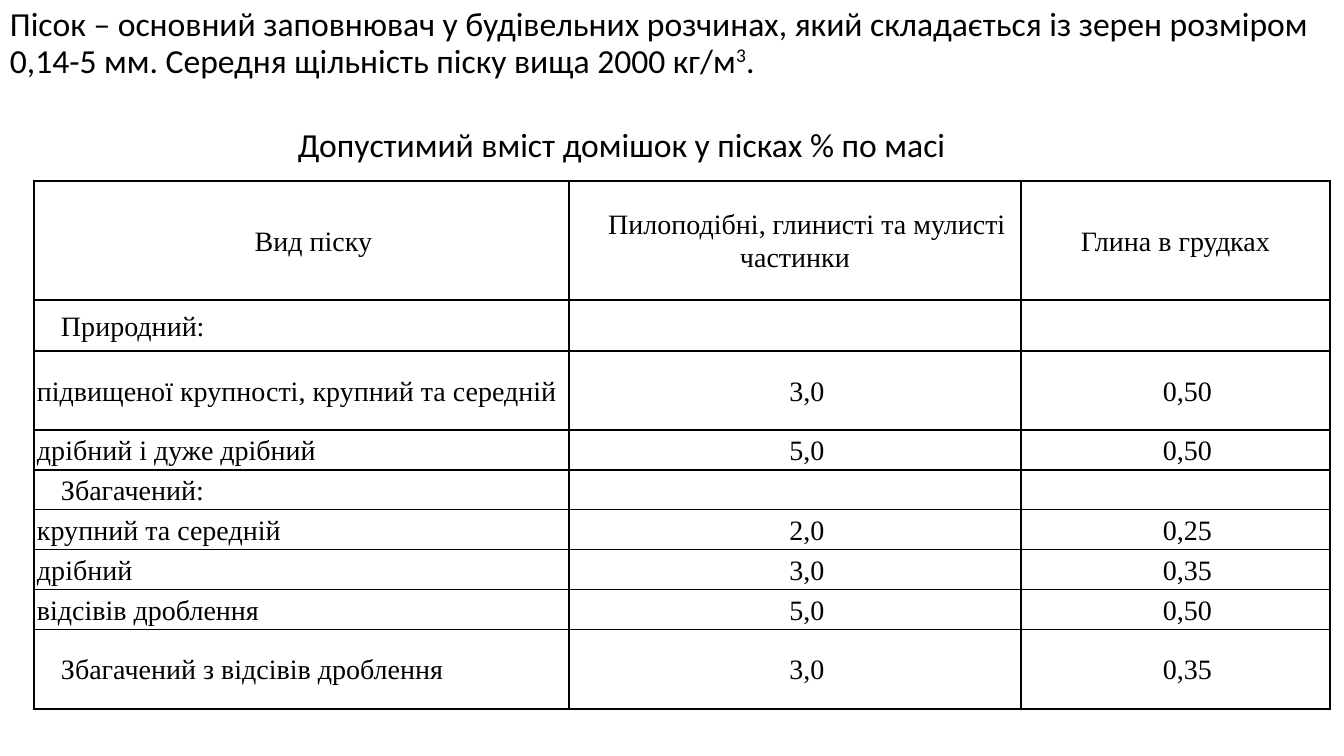
from lxml.etree import SubElement
from pptx import Presentation
from pptx.dml.color import RGBColor
from pptx.enum.text import MSO_ANCHOR, PP_ALIGN
from pptx.oxml.ns import qn
from pptx.util import Emu, Pt

PX = 914400 / 100.8
INDENT = 24
BLACK = "000000"
BODY = {"name": "Calibri", "size": Pt(24)}
TABLE = {"name": "Times New Roman", "size": Pt(20)}
COLUMNS = [535, 452, 309]
ROWS = [119, 51, 79, 40, 40, 40, 40, 40, 79]
SANDS = [
    ("Вид піску", "Пилоподібні, глинисті та мулисті частинки", "Глина в грудках"),
    ("Природний:", "", ""),
    ("підвищеної крупності, крупний та середній", "3,0", "0,50"),
    ("дрібний і дуже дрібний", "5,0", "0,50"),
    ("Збагачений:", "", ""),
    ("крупний та середній", "2,0", "0,25"),
    ("дрібний", "3,0", "0,35"),
    ("відсівів дроблення", "5,0", "0,50"),
    ("Збагачений з відсівів дроблення", "3,0", "0,35"),
]
INDENTED_ROWS = {0, 1, 4, 8}


def px(length):
    return Emu(round(length * PX))


def color(value):
    return RGBColor.from_string(value)


def apply(target, values):
    for name, value in values.items():
        setattr(target, name, value)


def add_span(para, text, font):
    span = para.add_run()
    span.text = text
    apply(span.font, font)
    span.font.color.rgb = color(BLACK)
    return span


def indent(para):
    para._p.get_or_add_pPr().set("indent", str(px(INDENT)))


def add_box(page, left, top, width, height):
    box = page.shapes.add_textbox(px(left), px(top), px(width), px(height))
    apply(box.text_frame, {"word_wrap": True, "vertical_anchor": MSO_ANCHOR.MIDDLE})
    return box.text_frame.paragraphs[0]


def add_definition(page, left, top, width, height):
    para = add_box(page, left, top, width, height)
    para.line_spacing = 0.9
    add_span(para, "Пісок – основний заповнювач у будівельних розчинах, який складається "
                   "із зерен розміром 0,14-5 мм. Середня щільність піску вища 2000 кг/м", BODY)
    power = add_span(para, "3", BODY)
    power.font._element.set("baseline", "30000")
    add_span(para, ".", BODY)


def add_caption(page, left, top, width, height):
    para = add_box(page, left, top, width, height)
    indent(para)
    add_span(para, "Допустимий вміст домішок у пісках % по масі", BODY)


def draw_borders(cell, row, column):
    thick = {
        "a:lnL": column == 0,
        "a:lnR": column == len(COLUMNS) - 1,
        "a:lnT": row in (0, 1),
        "a:lnB": row in (0, len(ROWS) - 1),
    }
    properties = cell._tc.get_or_add_tcPr()
    for tag, is_thick in thick.items():
        line = SubElement(properties, qn(tag), w=str(Pt(1.5 if is_thick else 1)))
        fill = SubElement(line, qn("a:solidFill"))
        SubElement(fill, qn("a:srgbClr"), val=BLACK)


def fill_cell(cell, text, row, column):
    apply(cell, {
        "margin_left": px(3), "margin_right": px(3), "margin_top": 0, "margin_bottom": 0,
        "vertical_anchor": MSO_ANCHOR.MIDDLE,
    })
    draw_borders(cell, row, column)
    cell.fill.background()
    if not text:
        return
    para = cell.text_frame.paragraphs[0]
    centred = row == 0 or column > 0
    apply(para, {"line_spacing": 1.07, "alignment": PP_ALIGN.CENTER if centred else PP_ALIGN.LEFT})
    if (row, column) != (0, 2) and (column > 0 or row in INDENTED_ROWS):
        indent(para)
    add_span(para, text, TABLE)


def add_sand_table(page, left, top):
    frame = page.shapes.add_table(
        len(ROWS), len(COLUMNS), px(left), px(top), px(sum(COLUMNS)), px(sum(ROWS)))
    table = frame.table
    apply(table, {"first_row": False, "horz_banding": False})
    for column, width in zip(table.columns, COLUMNS):
        column.width = px(width)
    for row, height in zip(table.rows, ROWS):
        row.height = px(height)
    for row, texts in enumerate(SANDS):
        for column, text in enumerate(texts):
            fill_cell(table.cell(row, column), text, row, column)


def main():
    deck = Presentation()
    apply(deck, {"slide_width": px(1344), "slide_height": px(756)})
    page = deck.slides.add_slide(deck.slide_layouts[6])
    add_definition(page, 0, -3, 1344, 94)
    add_sand_table(page, 34, 181)
    add_caption(page, 264, 119, 721, 50)
    deck.save("out.pptx")


if __name__ == "__main__":
    main()
